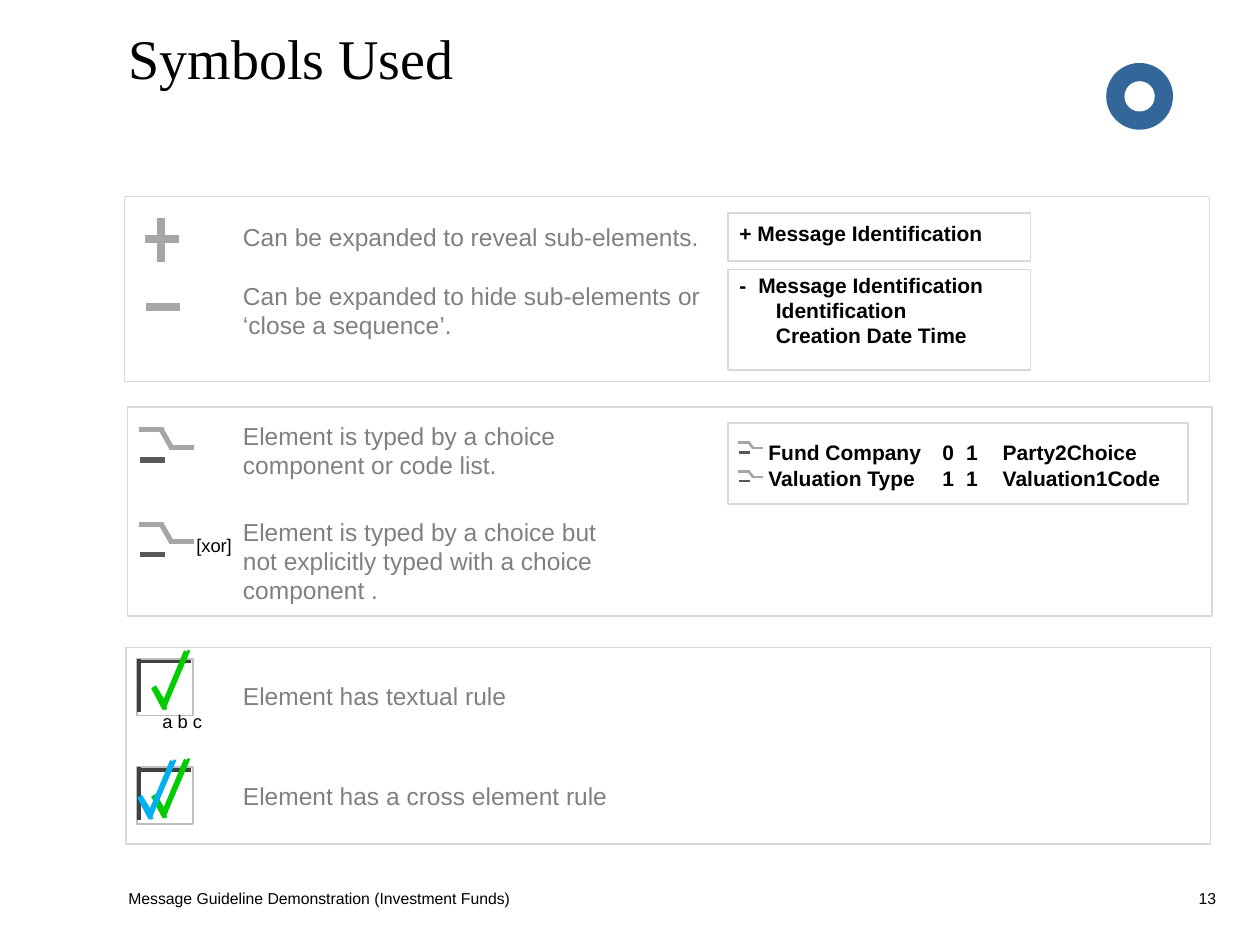
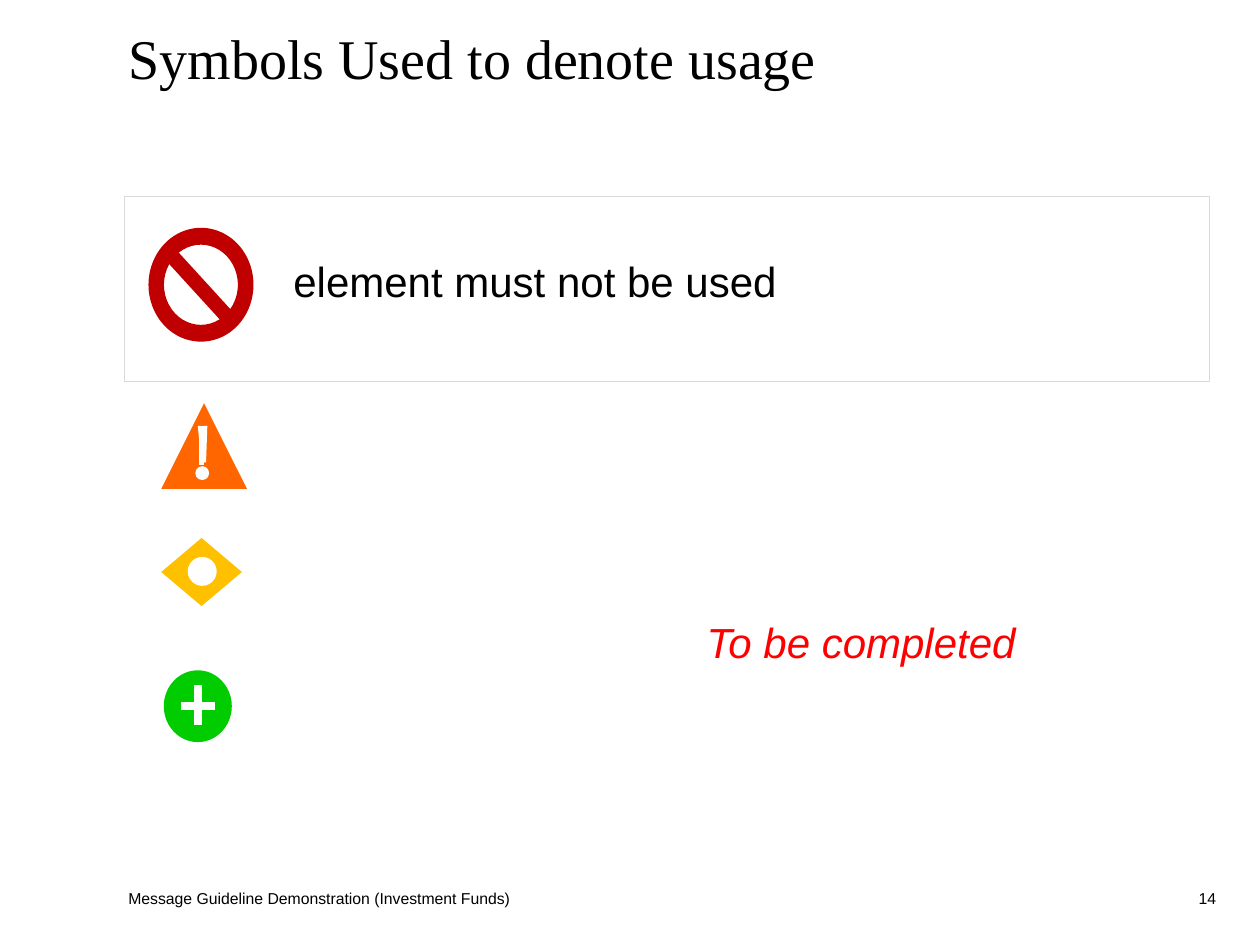
"""Build the two slides that explain the symbols used in message definitions."""
from typing import Any, NamedTuple

import pptx
import pptx.dml.color
import pptx.enum.shapes
import pptx.enum.text
import pptx.oxml.ns
import pptx.util
from lxml import etree
from pptx.util import Inches

SHAPE = pptx.enum.shapes.MSO_SHAPE
ANCHOR = pptx.enum.text.MSO_ANCHOR
ALIGN = pptx.enum.text.PP_ALIGN

BLACK, WHITE, RED = "000000", "FFFFFF", "FF0000"
GREY_TEXT, PANEL_GREY, SYMBOL_GREY = "808080", "D9D9D9", "A6A6A6"
DARK_GREY, BOX_GREY, BOX_EDGE = "595959", "BFBFBF", "404040"
GREEN, SKY, BLUE = "00CC00", "00B0F0", "336699"
CRIMSON, ORANGE, AMBER = "C00000", "FF6600", "FFC000"
FOOTER = "Message Guideline Demonstration (Investment Funds)"


class Box(NamedTuple):
    """Left, top, width and height in inches."""
    left: float
    top: float
    width: float
    height: float


class Stroke(NamedTuple):
    """A straight line: its ends in inches, weight in points and colour."""
    x1: float
    y1: float
    x2: float
    y2: float
    weight: float
    colour: str


class Meaning(NamedTuple):
    """The explanation of one symbol."""
    box: Box
    text: str


FIRST_PANEL = Box(0.99, 1.56, 8.61, 1.47)
PANELS = (FIRST_PANEL, Box(1.01, 3.23, 8.61, 1.66), Box(1, 5.14, 8.61, 1.56))
EXAMPLE_FRAMES = (Box(5.78, 1.69, 2.4, 0.38), Box(5.78, 2.14, 2.4, 0.8),
                  Box(5.78, 3.36, 3.65, 0.64))
MEANINGS = (
    Meaning(Box(1.83, 1.71, 3.85, 0.34), "Can be expanded to reveal sub-elements."),
    Meaning(Box(1.83, 2.18, 3.85, 0.57),
            "Can be expanded to hide sub-elements or ‘close a sequence’."),
    Meaning(Box(1.83, 3.29, 2.97, 0.57),
            "Element is typed by a choice\ncomponent or code list."),
    Meaning(Box(1.83, 4.05, 3.23, 0.81),
            "Element is typed by a choice but not explicitly typed with a choice component ."),
    Meaning(Box(1.83, 5.36, 3.23, 0.34), "Element has textual rule"),
    Meaning(Box(1.83, 6.15, 3.23, 0.34), "Element has a cross element rule"),
)
CHOICE = (
    Stroke(0, 0, 0.2, 0, 3, SYMBOL_GREY),
    Stroke(0.24, 0.14, 0.44, 0.14, 3, SYMBOL_GREY),
    Stroke(0.01, 0.24, 0.21, 0.24, 3, DARK_GREY),
    Stroke(0.18, 0, 0.26, 0.14, 3, SYMBOL_GREY),
)
CHECKBOX_EDGES = (
    Stroke(0.01, 0, 0.01, 0.42, 2.25, BOX_EDGE),
    Stroke(0.43, 0.02, 0.01, 0.02, 2.25, BOX_EDGE),
)
TICK = (
    Stroke(0.09, 0.47, 0.29, 0, 1.5, GREEN),
    Stroke(0.01, 0.29, 0.1, 0.44, 3, GREEN),
    Stroke(0.09, 0.44, 0.27, 0.01, 3, GREEN),
    Stroke(0.01, 0.3, 0.11, 0.47, 1.5, GREEN),
    Stroke(0, 0.3, 0.09, 0.47, 1.5, GREEN),
)
PLUS = (
    Stroke(1.15, 1.9, 1.42, 1.9, 4.5, SYMBOL_GREY),
    Stroke(1.28, 1.73, 1.28, 2.08, 4.5, SYMBOL_GREY),
)
MINUS = Stroke(1.16, 2.44, 1.43, 2.44, 4.5, SYMBOL_GREY)
EXCLAMATION = (
    Stroke(1.6, 3.38, 1.6, 3.69, 3, WHITE),
    Stroke(1.63, 3.38, 1.62, 3.67, 2.25, WHITE),
    Stroke(1.58, 3.38, 1.61, 3.67, 1.5, WHITE),
)
WHITE_PLUS = (
    Stroke(1.57, 5.44, 1.57, 5.75, 4.5, WHITE),
    Stroke(1.71, 5.6, 1.44, 5.6, 4.5, WHITE),
)


def rgb(colour: str) -> pptx.dml.color.RGBColor:
    """Turn a hex string into a colour."""
    return pptx.dml.color.RGBColor.from_string(colour)


def place(box: Box) -> tuple[int, ...]:
    """Convert a box to lengths."""
    return tuple(Inches(value) for value in box)


def write(frame: Any, text: str, *, size: float, colour: str = BLACK,
          font: str = "Arial", bold: bool = False, italic: bool = False,
          align: Any = ALIGN.LEFT, anchor: Any = ANCHOR.TOP, wrap: bool = True,
          tabs: tuple[float, ...] = (), leading: float | None = None) -> None:
    """Fill a text frame with one paragraph per line of text."""
    frame.word_wrap = wrap
    frame.auto_size = pptx.enum.text.MSO_AUTO_SIZE.NONE
    frame.vertical_anchor = anchor
    for index, line in enumerate(text.split("\n")):
        paragraph = frame.add_paragraph() if index else frame.paragraphs[0]
        if tabs:
            stops = etree.SubElement(paragraph._p.get_or_add_pPr(),
                                     pptx.oxml.ns.qn("a:tabLst"))
            for stop in tabs:
                etree.SubElement(stops, pptx.oxml.ns.qn("a:tab"),
                                 pos=str(Inches(stop)), algn="l")
        paragraph.alignment = align
        if leading:
            paragraph.line_spacing = pptx.util.Pt(leading)
        run = paragraph.add_run()
        run.text = line
        run.font.name, run.font.size = font, pptx.util.Pt(size)
        run.font.bold, run.font.italic = bold, italic
        run.font.color.rgb = rgb(colour)


def add_text(shapes: Any, box: Box, text: str, **style: Any) -> None:
    """Add a text box."""
    write(shapes.add_textbox(*place(box)).text_frame, text, **style)


def add_figure(shapes: Any, kind: Any, box: Box, *, fill: str | None = None,
               line: str | None = None, weight: float = 0.75) -> None:
    """Add a preset shape with an optional fill and outline."""
    figure = shapes.add_shape(kind, *place(box))
    figure.shadow.inherit = False
    if fill:
        figure.fill.solid()
        figure.fill.fore_color.rgb = rgb(fill)
    else:
        figure.fill.background()
    if line:
        figure.line.color.rgb = rgb(line)
        figure.line.width = pptx.util.Pt(weight)
    else:
        figure.line.fill.background()


def add_strokes(shapes: Any, strokes: tuple[Stroke, ...], left: float = 0,
                top: float = 0, *, scale_x: float = 1, scale_y: float = 1,
                weight: float | None = None, colour: str | None = None) -> None:
    """Draw strokes from a starting point, scaled or restyled on request."""
    for stroke in strokes:
        line = shapes.add_connector(
            pptx.enum.shapes.MSO_CONNECTOR.STRAIGHT,
            Inches(left + stroke.x1 * scale_x), Inches(top + stroke.y1 * scale_y),
            Inches(left + stroke.x2 * scale_x), Inches(top + stroke.y2 * scale_y))
        line.line.color.rgb = rgb(colour or stroke.colour)
        line.line.width = pptx.util.Pt(weight or stroke.weight)
        etree.SubElement(line._element.spPr, pptx.oxml.ns.qn("a:effectLst"))


def add_group(slide: Any) -> Any:
    """Start a group and return its shapes."""
    return slide.shapes.add_group_shape().shapes


def add_checkbox(slide: Any, top: float) -> Any:
    """Draw a box with a green tick and return the group's shapes."""
    checkbox = add_group(slide)
    add_figure(checkbox, SHAPE.RECTANGLE, Box(1.09, top, 0.44, 0.45),
               fill=WHITE, line=BOX_GREY, weight=1)
    add_strokes(checkbox, CHECKBOX_EDGES, 1.09, top)
    add_strokes(checkbox, TICK, 1.21, top - 0.07)
    return checkbox


def add_base_slide(deck: Any, title: str, number: int) -> Any:
    """Add a slide with its title, footer and first panel."""
    slide = deck.slides.add_slide(deck.slide_layouts[5])
    heading = slide.shapes.title
    heading.left, heading.top, heading.width, heading.height = place(
        Box(0.92, 0.14, 8.33, 1.25))
    write(heading.text_frame, title, size=32, font="Times New Roman")
    add_text(slide.shapes, Box(0.92, 7, 6.21, 0.25), FOOTER, size=9, anchor=ANCHOR.MIDDLE)
    add_text(slide.shapes, Box(8.92, 7, 0.83, 0.25), str(number), size=9,
             align=ALIGN.RIGHT, anchor=ANCHOR.MIDDLE)
    add_figure(slide.shapes, SHAPE.RECTANGLE, FIRST_PANEL, line=PANEL_GREY)
    return slide


def build_symbols(deck: Any) -> None:
    """Build the slide on structure and rule symbols."""
    slide = add_base_slide(deck, "Symbols Used", 13)
    shapes = slide.shapes
    for panel in PANELS[1:]:
        add_figure(shapes, SHAPE.RECTANGLE, panel, line=PANEL_GREY)
    for frame in EXAMPLE_FRAMES:
        add_figure(shapes, SHAPE.RECTANGLE, frame, line=PANEL_GREY, weight=1)
    for meaning in MEANINGS:
        add_text(shapes, meaning.box, meaning.text, size=14, colour=GREY_TEXT)

    add_strokes(add_group(slide), PLUS)
    add_strokes(shapes, (MINUS,))
    add_text(shapes, Box(5.77, 1.7, 2.15, 0.3), "+ Message Identification",
             size=12, bold=True, wrap=False)
    add_text(shapes, Box(5.77, 2.11, 2.16, 0.71),
             "-\tMessage Identification\n\t\tIdentification\n\t\tCreation Date Time",
             size=12, bold=True, wrap=False, tabs=(0.15, 0.29))

    add_strokes(add_group(slide), CHOICE, 1.1, 3.41)
    explicit_choice = add_group(slide)
    add_strokes(explicit_choice, CHOICE, 1.1, 4.16)
    add_text(explicit_choice, Box(1.46, 4.19, 0.49, 0.28), "[xor]", size=10.5, wrap=False)
    add_text(shapes, Box(6, 3.43, 3.35, 0.51),
             "Fund Company\t0\t1\tParty2Choice\nValuation Type\t1\t1\tValuation1Code",
             size=12, bold=True, wrap=False, tabs=(1.38, 1.57, 1.86), leading=15)
    for top in (3.51, 3.74):
        add_strokes(add_group(slide), CHOICE, 5.86, top,
                    scale_x=0.45, scale_y=0.33, weight=1.5)

    textual_rule = add_checkbox(slide, 5.23)
    add_text(textual_rule, Box(1.19, 5.59, 0.52, 0.28), "a b c", size=10.5, wrap=False)
    cross_rule = add_checkbox(slide, 6.09)
    add_strokes(cross_rule, TICK, 1.1, 6.03, colour=SKY)

    ring = add_group(slide)
    add_figure(ring, SHAPE.OVAL, Box(8.78, 0.5, 0.53, 0.53), fill=BLUE)
    add_figure(ring, SHAPE.OVAL, Box(8.93, 0.65, 0.23, 0.23), fill=WHITE, line=WHITE)


def build_usage(deck: Any) -> None:
    """Build the slide on usage symbols."""
    slide = add_base_slide(deck, "Symbols Used to denote usage", 14)

    warning = add_group(slide)
    add_figure(warning, SHAPE.ISOSCELES_TRIANGLE, Box(1.28, 3.2, 0.68, 0.68), fill=ORANGE)
    add_figure(warning, SHAPE.OVAL, Box(1.55, 3.7, 0.11, 0.11), fill=WHITE)
    add_strokes(warning, EXCLAMATION)

    addition = add_group(slide)
    add_figure(addition, SHAPE.OVAL, Box(1.3, 5.32, 0.54, 0.57), fill=GREEN)
    add_strokes(addition, WHITE_PLUS)

    forbidden = add_group(slide)
    for circle in (Box(1.22, 1.85, 0.75, 0.82), Box(1.26, 1.9, 0.67, 0.72)):
        add_figure(forbidden, SHAPE.OVAL, circle, line=CRIMSON, weight=6)
    for top in (1.97, 2.02):
        add_strokes(forbidden, (Stroke(0, 0, 0.53, 0.58, 6, CRIMSON),), 1.33, top)

    decision = add_group(slide)
    add_figure(decision, SHAPE.FLOWCHART_DECISION, Box(1.28, 4.27, 0.64, 0.54), fill=AMBER)
    add_figure(decision, SHAPE.OVAL, Box(1.49, 4.42, 0.23, 0.23), fill=WHITE)

    add_text(slide.shapes, Box(2.23, 1.98, 4.08, 0.5), "element must not be used",
             size=24, wrap=False)
    add_text(slide.shapes, Box(5.51, 4.84, 2.67, 0.5), "To be completed",
             size=24, colour=RED, italic=True, wrap=False)


def main() -> None:
    """Build and save the deck."""
    deck = pptx.Presentation()
    deck.slide_width, deck.slide_height = Inches(10), Inches(7.5)
    build_symbols(deck)
    build_usage(deck)
    deck.save("out.pptx")


if __name__ == "__main__":
    main()
